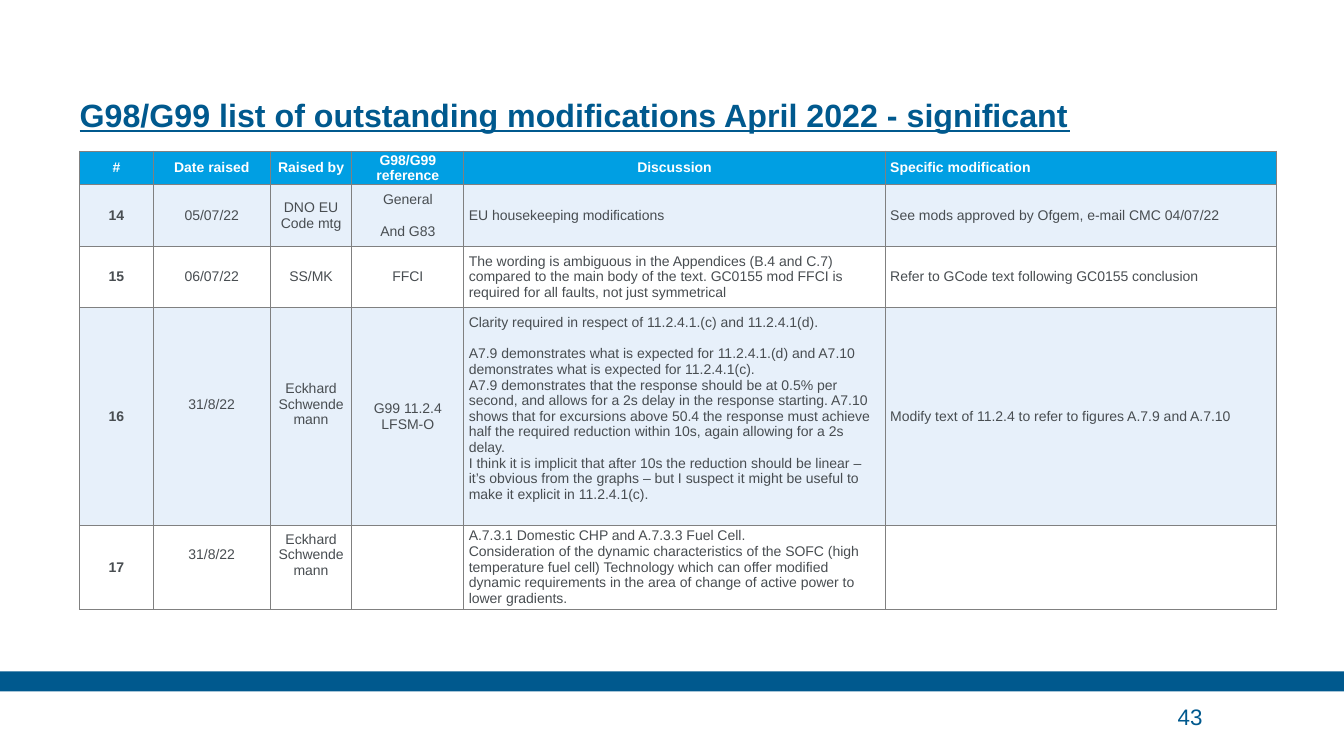
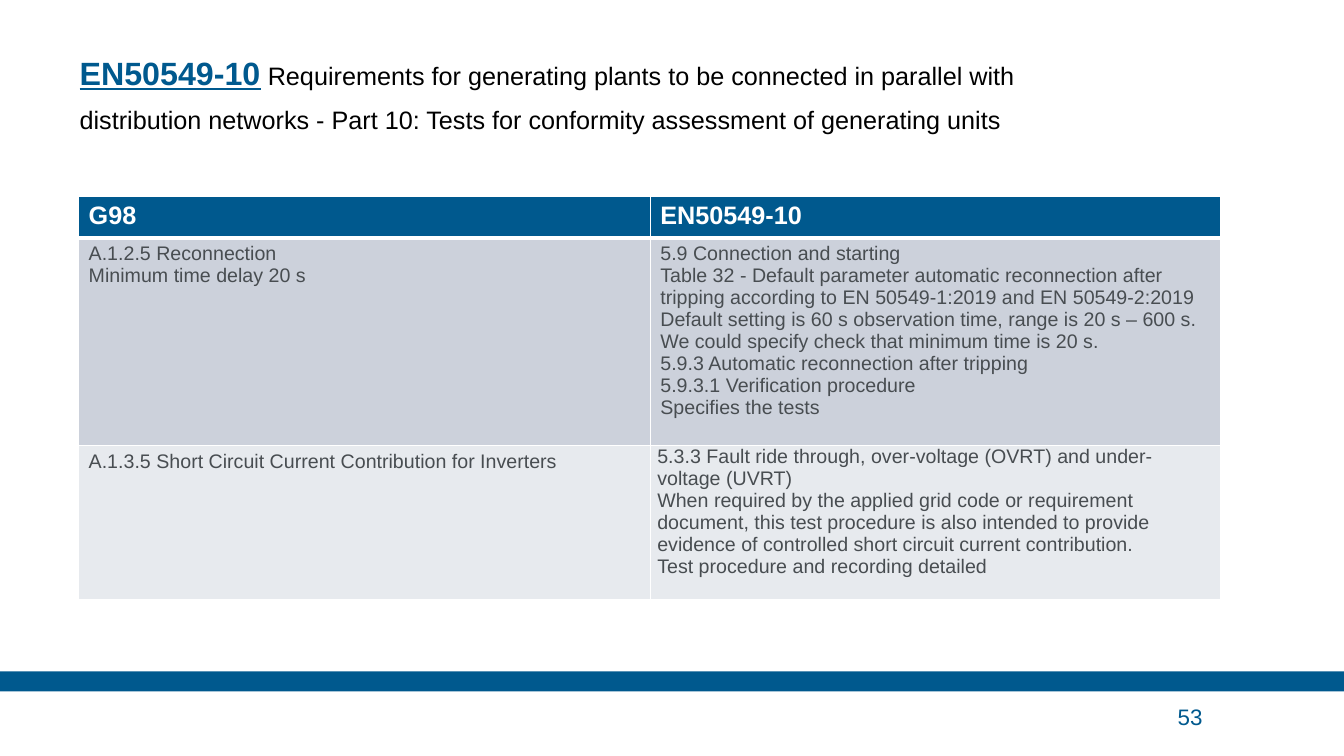
import lxml.etree
import pptx
import pptx.dml.color
import pptx.enum.shapes
import pptx.enum.text
import pptx.oxml.ns
import pptx.util

Inches = pptx.util.Inches
ALIGN = pptx.enum.text.PP_ALIGN
ANCHOR = pptx.enum.text.MSO_ANCHOR

COLORS = {
    "navy": "00598E", "blue": "009FE3", "text": "484D51", "black": "000000",
    "white": "FFFFFF", "grey": "808080", "pale": "E7F0FA",
    "band_dark": "CCD1DB", "band_light": "E7EAEE",
}
FONT = "Arial"
BLANK_LINE = 11.5

MODIFICATION_HEADER = ["#", "Date raised", "Raised by", "G98/G99 reference",
                       "Discussion", "Specific modification"]
MODIFICATIONS = [
    ["14", "05/07/22", "DNO EU Code mtg", ["General", "And G83"],
     "EU housekeeping modifications",
     "See mods approved by Ofgem, e-mail CMC 04/07/22"],
    ["15", "06/07/22", "SS/MK", "FFCI",
     "The wording is ambiguous in the Appendices (B.4 and C.7) compared to the main body "
     "of the text. GC0155 mod FFCI is required for all faults, not just symmetrical",
     "Refer to GCode text following GC0155 conclusion"],
    ["16", "31/8/22", "Eckhard Schwendemann", "G99 11.2.4 LFSM-O",
     ["Clarity required in respect of 11.2.4.1.(c) and 11.2.4.1(d).",
      "A7.9 demonstrates what is expected for 11.2.4.1.(d) and A7.10 demonstrates what is "
      "expected for 11.2.4.1(c).",
      "A7.9 demonstrates that the response should be at 0.5% per second, and allows for a 2s "
      "delay in the response starting. A7.10 shows that for excursions above 50.4 the response "
      "must achieve half the required reduction within 10s, again allowing for a 2s delay.",
      "I think it is implicit that after 10s the reduction should be linear – it’s obvious from "
      "the graphs – but I suspect it might be useful to make it explicit in 11.2.4.1(c)."],
     "Modify text of 11.2.4 to refer to figures A.7.9 and A.7.10"],
    ["17", "31/8/22", "Eckhard Schwendemann", "",
     ["A.7.3.1 Domestic CHP and A.7.3.3 Fuel Cell.",
      "Consideration of the dynamic characteristics of the SOFC (high temperature fuel cell) "
      "Technology which can offer modified dynamic requirements in the area of change of active "
      "power to lower gradients."],
     ""],
]
COMPARISON = [
    ["G98", "EN50549-10"],
    [["A.1.2.5 Reconnection", "Minimum time delay 20 s"],
     ["5.9 Connection and starting",
      "Table 32 - Default parameter automatic reconnection after tripping according to "
      "EN 50549-1:2019 and EN 50549-2:2019",
      "Default setting is 60 s observation time, range is 20 s – 600 s. We could specify check "
      "that minimum time is 20 s.",
      "5.9.3 Automatic reconnection after tripping",
      "5.9.3.1 Verification procedure",
      "Specifies the tests"]],
    ["A.1.3.5 Short Circuit Current Contribution for Inverters",
     ["5.3.3 Fault ride through, over-voltage (OVRT) and under-voltage (UVRT)",
      "When required by the applied grid code or requirement document, this test procedure is "
      "also intended to provide evidence of controlled short circuit current contribution.",
      "Test procedure and recording detailed"]],
]


def rgb(name):
    """Return the named colour."""
    return pptx.dml.color.RGBColor.from_string(COLORS[name])


def add_run(paragraph, text, size, color, bold=False, underline=False):
    """Add a formatted run to a paragraph."""
    run = paragraph.add_run()
    run.text = text
    font = run.font
    font.name, font.size = FONT, pptx.util.Pt(size)
    font.bold, font.underline = bold, underline
    font.color.rgb = rgb(color)


def add_text(slide, box, runs, anchor, line_spacing=None):
    """Add a one-paragraph text box without insets."""
    frame = slide.shapes.add_textbox(*map(Inches, box)).text_frame
    frame.word_wrap = True
    frame.vertical_anchor = anchor
    frame.margin_left = frame.margin_right = frame.margin_top = frame.margin_bottom = 0
    paragraph = frame.paragraphs[0]
    if line_spacing:
        paragraph.line_spacing = pptx.util.Pt(line_spacing)
    for text, style in runs:
        add_run(paragraph, text, **style)


def add_base_slide(presentation, heading, page, subtitle=""):
    """Add a slide with its title, footer band and page number."""
    slide = presentation.slides.add_slide(presentation.slide_layouts[6])
    band = slide.shapes.add_shape(pptx.enum.shapes.MSO_SHAPE.RECTANGLE, 0, Inches(6.66),
                                  presentation.slide_width, Inches(0.2))
    band.shadow.inherit = False
    band.fill.solid()
    band.fill.fore_color.rgb = rgb("navy")
    band.line.fill.background()
    title = [(heading, dict(size=23, color="navy", bold=True, underline=True))]
    if subtitle:
        title.append((subtitle, dict(size=18, color="black")))
    add_text(slide, (0.79, 0.31, 9.84, 1.02), title, ANCHOR.BOTTOM, line_spacing=30)
    add_text(slide, (11.68, 6.91, 1.23, 0.39), [(page, dict(size=16, color="navy"))],
             ANCHOR.MIDDLE)
    return slide


def set_borders(cell, color, width, **side_widths):
    """Draw the four cell borders, with optional widths for single sides."""
    properties = cell._tc.get_or_add_tcPr()
    for index, side in enumerate("LRTB"):
        line = lxml.etree.Element(pptx.oxml.ns.qn("a:ln" + side),
                                  w=str(pptx.util.Pt(side_widths.get(side, width))))
        fill = lxml.etree.SubElement(line, pptx.oxml.ns.qn("a:solidFill"))
        lxml.etree.SubElement(fill, pptx.oxml.ns.qn("a:srgbClr"), val=COLORS[color])
        properties.insert(index, line)


def add_table(slide, left, top, widths, heights):
    """Add an unstyled table with the given column widths and row heights."""
    table = slide.shapes.add_table(len(heights), len(widths), Inches(left), Inches(top),
                                   Inches(sum(widths)), Inches(sum(heights))).table
    table.first_row = table.horz_banding = False
    for column, width in zip(table.columns, widths):
        column.width = Inches(width)
    for row, height in zip(table.rows, heights):
        row.height = Inches(height)
    return table


def fill_cell(cell, content, fill, size, color, bold=False, align=ALIGN.LEFT,
              anchor=ANCHOR.TOP, margins=(0.1, 0.05, 0.1, 0.05), gaps=()):
    """Write one paragraph per text, with gaps in points before the later ones."""
    cell.fill.solid()
    cell.fill.fore_color.rgb = rgb(fill)
    cell.vertical_anchor = anchor
    (cell.margin_left, cell.margin_top,
     cell.margin_right, cell.margin_bottom) = map(Inches, margins)
    texts = [content] if isinstance(content, str) else content
    for index, text in enumerate(texts):
        frame = cell.text_frame
        paragraph = frame.add_paragraph() if index else frame.paragraphs[0]
        paragraph.alignment = align
        if 0 < index <= len(gaps):
            paragraph.space_before = pptx.util.Pt(gaps[index - 1])
        if text:
            add_run(paragraph, text, size, color, bold)
        else:
            paragraph.font.size = pptx.util.Pt(size)


def add_modifications_table(slide):
    """Add the list of outstanding modifications."""
    table = add_table(slide, 0.79, 1.5, [0.73, 1.16, 0.81, 1.11, 4.18, 3.88],
                      [0.33, 0.61, 0.61, 2.02, 0.78])
    raised_cells = {(row, column): 0.24 for row in (3, 4) for column in (1, 2)}
    bottom_margins = {**raised_cells, (3, 4): 0.16}
    gaps = {(1, 3): [12], (3, 4): [BLANK_LINE]}
    for row, texts in enumerate([MODIFICATION_HEADER] + MODIFICATIONS):
        header = row == 0
        fill = "blue" if header else "pale" if row % 2 else "white"
        for column, content in enumerate(texts):
            cell = table.cell(row, column)
            centred = column < 4 or (header and column == 4)
            fill_cell(cell, content, fill, 10, "white" if header else "text",
                      bold=header or column == 0,
                      align=ALIGN.CENTER if centred else ALIGN.LEFT, anchor=ANCHOR.MIDDLE,
                      margins=(0.05, 0, 0.05, bottom_margins.get((row, column), 0)),
                      gaps=gaps.get((row, column), ()))
            set_borders(cell, "grey", 1)


def add_comparison_table(slide):
    """Add the comparison of the two standards."""
    table = add_table(slide, 0.78, 1.95, [5.67, 5.66], [0.41, 2.06, 1.53])
    fills = ["navy", "band_dark", "band_light"]
    for row, (texts, fill) in enumerate(zip(COMPARISON, fills)):
        header = row == 0
        for column, content in enumerate(texts):
            cell = table.cell(row, column)
            tight = (row, column) == (2, 1)
            fill_cell(cell, content, fill, 18 if header else 14,
                      "white" if header else "text", bold=header,
                      margins=(0.07, 0, 0.07, 0) if tight else (0.1, 0.05, 0.1, 0.05))
            set_borders(cell, "white", 1, T=3 if row == 1 else 1, B=3 if header else 1)


def main():
    """Build and save the presentation."""
    presentation = pptx.Presentation()
    presentation.slide_width, presentation.slide_height = Inches(13.33), Inches(7.5)
    add_modifications_table(add_base_slide(
        presentation, "G98/G99 list of outstanding modifications April 2022 - significant", "43"))
    add_comparison_table(add_base_slide(
        presentation, "EN50549-10", "53",
        " Requirements for generating plants to be connected in parallel with distribution "
        "networks - Part 10: Tests for conformity assessment of generating units"))
    presentation.save("out.pptx")


if __name__ == "__main__":
    main()
